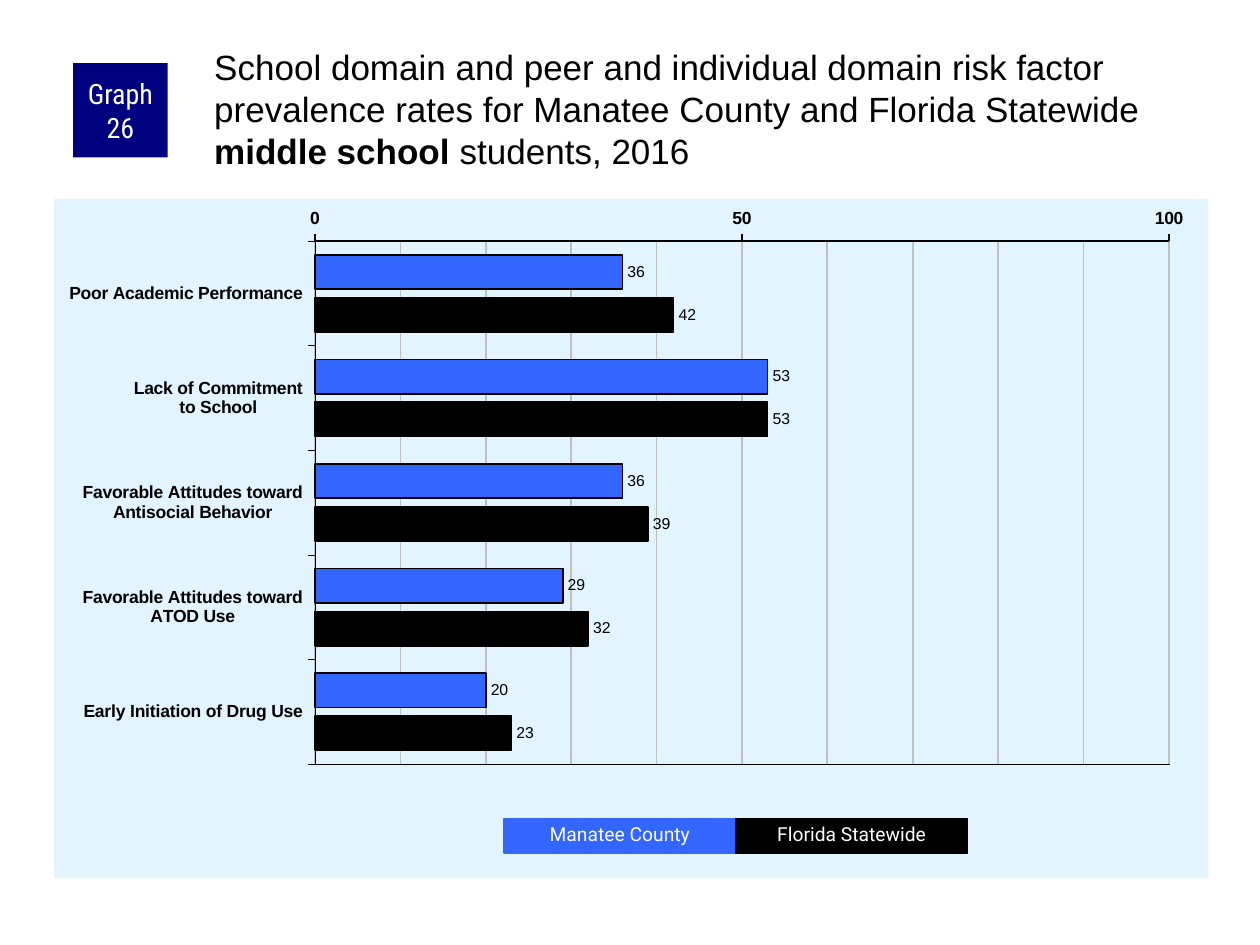
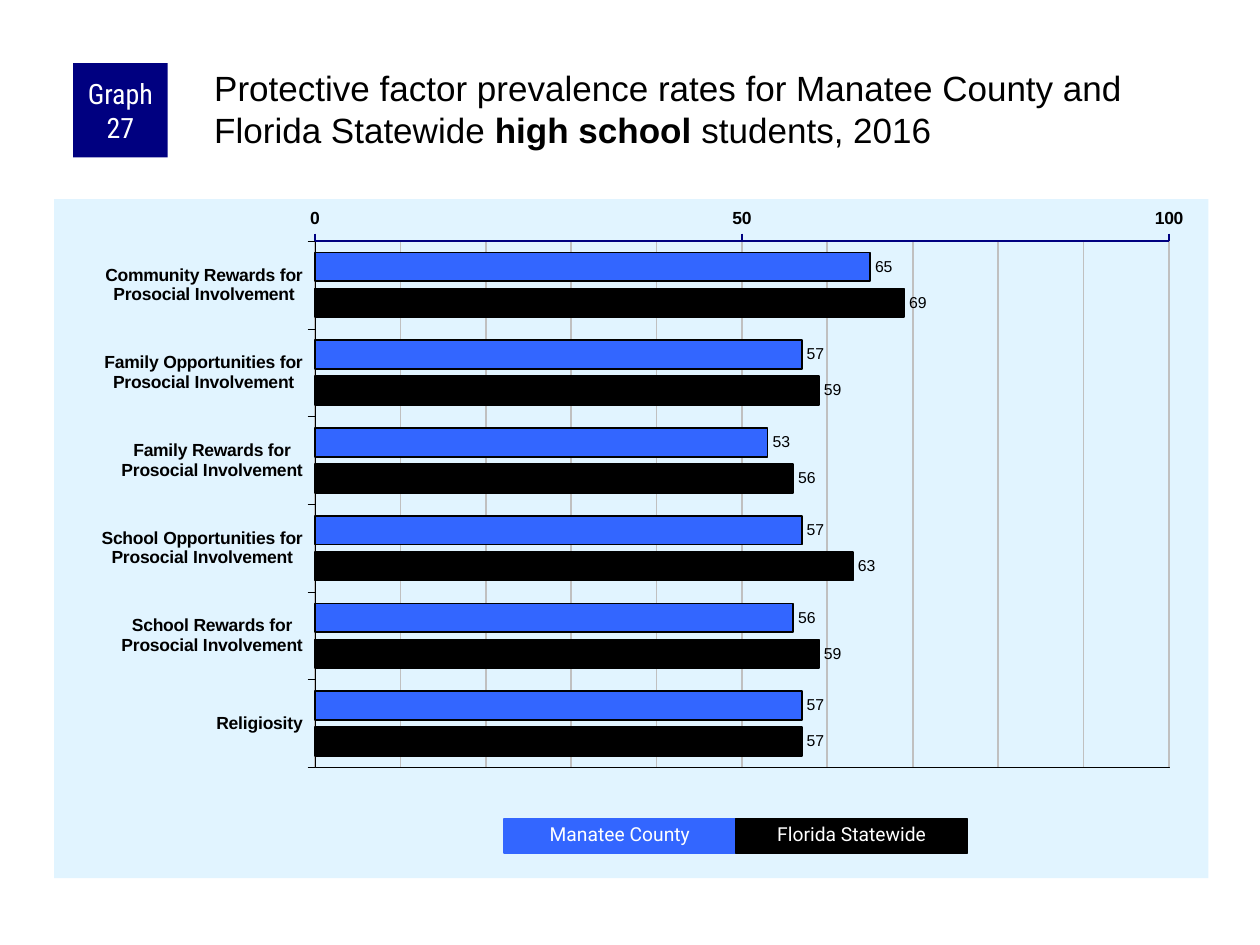
from copy import deepcopy

from lxml import etree
from pptx import Presentation
from pptx.chart.data import CategoryChartData
from pptx.dml.color import RGBColor
from pptx.enum.chart import (XL_AXIS_CROSSES, XL_CHART_TYPE,
                             XL_LABEL_POSITION, XL_TICK_MARK)
from pptx.enum.shapes import MSO_SHAPE
from pptx.enum.text import MSO_ANCHOR, MSO_AUTO_SIZE, PP_ALIGN
from pptx.oxml import parse_xml
from pptx.oxml.ns import qn
from pptx.util import Inches, Pt

CLUSTERED = XL_CHART_TYPE.BAR_CLUSTERED
AXIS_AT_END = XL_AXIS_CROSSES.MAXIMUM
OUTSIDE, NO_TICK = XL_TICK_MARK.OUTSIDE, XL_TICK_MARK.NONE
OUTSIDE_END = XL_LABEL_POSITION.OUTSIDE_END
RECTANGLE = MSO_SHAPE.RECTANGLE
TOP, MIDDLE = MSO_ANCHOR.TOP, MSO_ANCHOR.MIDDLE
CENTER = PP_ALIGN.CENTER
GROW = MSO_AUTO_SIZE.SHAPE_TO_FIT_TEXT

WHITE, BLACK, NAVY, BLUE = "FFFFFF", "000000", "000080", "3366FF"
PANEL, GRID = "E1F4FF", "C0C0C0"
TITLE_FONT, BADGE_FONT, KEY_FONT = "Arial", "Roboto Condensed", "Roboto"

# Boxes: left, top, width, height in inches
CHART_BOX = (0.43, 1.58, 9.16, 5.39)
BADGE_BOX = (0.58, 0.5, 0.75, 0.75)
KEY_BOX = (4, 6.5, 3.68, 0.27)
GROUPS = [("Manatee County", BLUE), ("Florida Statewide", BLACK)]

NAMESPACES = ('xmlns:c="http://schemas.openxmlformats.org/drawingml/2006/chart" '
              'xmlns:a="http://schemas.openxmlformats.org/drawingml/2006/main"')

GRAPHS = [
    dict(label="Graph 26", title_top=0.33, plot_height=0.77, baseline=BLACK,
         title=[("School domain and peer and individual domain risk factor "
                 "prevalence rates for Manatee County and Florida Statewide ", False),
                ("middle school", True), (" students, 2016", False)],
         rates=[("Poor Academic Performance", 36, 42),
                ("Lack of Commitment\nto School", 53, 53),
                ("Favorable Attitudes toward\nAntisocial Behavior", 36, 39),
                ("Favorable Attitudes toward\nATOD Use", 29, 32),
                ("Early Initiation of Drug Use", 20, 23)]),
    dict(label="Graph 27", title_top=0.5, plot_height=0.775, baseline=NAVY,
         title=[("Protective factor prevalence rates for Manatee County and "
                 "Florida Statewide ", False),
                ("high school ", True), ("students, 2016", False)],
         rates=[("Community Rewards for\nProsocial Involvement", 65, 69),
                ("Family Opportunities for\nProsocial Involvement", 57, 59),
                ("Family Rewards for\nProsocial Involvement", 53, 56),
                ("School Opportunities for\nProsocial Involvement", 57, 63),
                ("School Rewards for\nProsocial Involvement", 56, 59),
                ("Religiosity", 57, 57)]),
]


def rgb(hex_color):
    return RGBColor.from_string(hex_color)


def inches(box):
    return [Inches(length) for length in box]


def set_font(font, size, name, color, bold=False):
    font.size, font.name, font.bold = Pt(size), name, bold
    font.color.rgb = rgb(color)


def set_line(line, color, width):
    line.color.rgb = rgb(color)
    line.width = Pt(width)


def add_block(slide, box, text, fill, size, font):
    """Filled rectangle with centred white text."""
    block = slide.shapes.add_shape(RECTANGLE, *inches(box))
    block.shadow.inherit = False
    block.fill.solid()
    block.fill.fore_color.rgb = rgb(fill)
    block.line.fill.background()
    block.text_frame.word_wrap = True
    paragraph = block.text_frame.paragraphs[0]
    paragraph.text = text
    paragraph.alignment = CENTER
    set_font(paragraph.font, size, font, WHITE)
    return block


def add_badge(slide, box, label):
    frame = add_block(slide, box, label, NAVY, 16, BADGE_FONT).text_frame
    frame.vertical_anchor = MIDDLE
    frame.margin_left = frame.margin_right = Inches(0.05)
    frame.margin_top = frame.margin_bottom = 0


def add_title(slide, box, parts):
    frame = slide.shapes.add_textbox(*inches(box)).text_frame
    frame.word_wrap = True
    frame.margin_left = frame.margin_top = Inches(0.03)
    frame.margin_right = frame.margin_bottom = 0
    for text, bold in parts:
        run = frame.paragraphs[0].add_run()
        run.text = text
        set_font(run.font, 20, TITLE_FONT, BLACK, bold)


def add_key(slide, box):
    left, top, width, height = box
    entry_width = width / len(GROUPS)
    for i, (name, color) in enumerate(GROUPS):
        entry = add_block(slide, (left + i * entry_width, top, entry_width, height),
                          name, color, 11, KEY_FONT)
        set_line(entry.line, color, 0.75)
        entry.text_frame.vertical_anchor = TOP
        entry.text_frame.auto_size = GROW
        entry.text_frame.paragraphs[0].line_spacing = 0.9


def style_chart_areas(chart, plot_height):
    """Panel fill, plot frame and inner plot position, which need XML."""
    space = chart.element
    panel = parse_xml(
        f'<c:spPr {NAMESPACES}><a:solidFill><a:srgbClr val="{PANEL}"/></a:solidFill>'
        '<a:ln><a:noFill/></a:ln></c:spPr>')
    space.find(qn("c:chart")).addnext(panel)

    plot_area = space.find(".//" + qn("c:plotArea"))
    plot_area.append(parse_xml(
        f'<c:spPr {NAMESPACES}><a:noFill/><a:ln w="3175"><a:solidFill>'
        f'<a:srgbClr val="{BLACK}"/></a:solidFill></a:ln></c:spPr>'))

    for old_layout in plot_area.findall(qn("c:layout")):
        plot_area.remove(old_layout)
    layout = etree.Element(qn("c:layout"))
    manual = etree.SubElement(layout, qn("c:manualLayout"))
    for tag, value in [("layoutTarget", "inner"), ("xMode", "edge"), ("yMode", "edge"),
                       ("x", 0.226), ("y", 0.062), ("w", 0.74), ("h", plot_height)]:
        etree.SubElement(manual, qn("c:" + tag)).set("val", str(value))
    plot_area.insert(0, layout)


def style_axes(chart, baseline):
    factors, rates = chart.category_axis, chart.value_axis
    for axis in (factors, rates):
        axis.major_tick_mark, axis.minor_tick_mark = OUTSIDE, NO_TICK
        set_font(axis.tick_labels.font, 10, TITLE_FONT, BLACK, True)
    set_line(factors.format.line, BLACK, 0.25)
    set_line(rates.format.line, baseline, 1)

    # First factor on top, rates along the bottom
    factors.reverse_order = True
    factors.crosses = AXIS_AT_END
    rates.minimum_scale, rates.maximum_scale = 0, 100
    rates.major_unit, rates.minor_unit = 50, 10

    # Minor gridlines take the line of the major ones
    rates.has_major_gridlines = rates.has_minor_gridlines = True
    set_line(rates.major_gridlines.format.line, GRID, 1)
    value_axis = chart.element.find(".//" + qn("c:valAx"))
    grid_style = value_axis.find(qn("c:majorGridlines")).find(qn("c:spPr"))
    value_axis.find(qn("c:minorGridlines")).append(deepcopy(grid_style))


def add_rates_chart(slide, box, rates, plot_height, baseline):
    factors, *columns = zip(*rates)
    data = CategoryChartData()
    data.categories = factors
    for (name, _), values in zip(GROUPS, columns):
        data.add_series(name, values)
    chart = slide.shapes.add_chart(CLUSTERED, *inches(box), data).chart
    chart.has_title = chart.has_legend = False
    set_font(chart.font, 11.8, TITLE_FONT, BLACK)

    # Bars and their values
    plot = chart.plots[0]
    plot.vary_by_categories = False
    plot.gap_width, plot.overlap = 80, -25
    for series, (_, color) in zip(plot.series, GROUPS):
        series.format.fill.solid()
        series.format.fill.fore_color.rgb = rgb(color)
        series.invert_if_negative = False
        set_line(series.format.line, BLACK, 1)
        labels = series.data_labels
        labels.show_value = True
        labels.position = OUTSIDE_END
        set_font(labels.font, 9, TITLE_FONT, BLACK)

    style_axes(chart, baseline)
    style_chart_areas(chart, plot_height)


def add_graph_slide(deck, graph):
    slide = deck.slides.add_slide(deck.slide_layouts[6])
    add_rates_chart(slide, CHART_BOX, graph["rates"], graph["plot_height"],
                    graph["baseline"])
    add_badge(slide, BADGE_BOX, graph["label"])
    add_title(slide, (1.67, graph["title_top"], 7.92, 0.83), graph["title"])
    add_key(slide, KEY_BOX)


def main():
    deck = Presentation()
    deck.slide_width, deck.slide_height = Inches(10), Inches(7.5)
    for graph in GRAPHS:
        add_graph_slide(deck, graph)
    deck.save("out.pptx")


if __name__ == "__main__":
    main()
